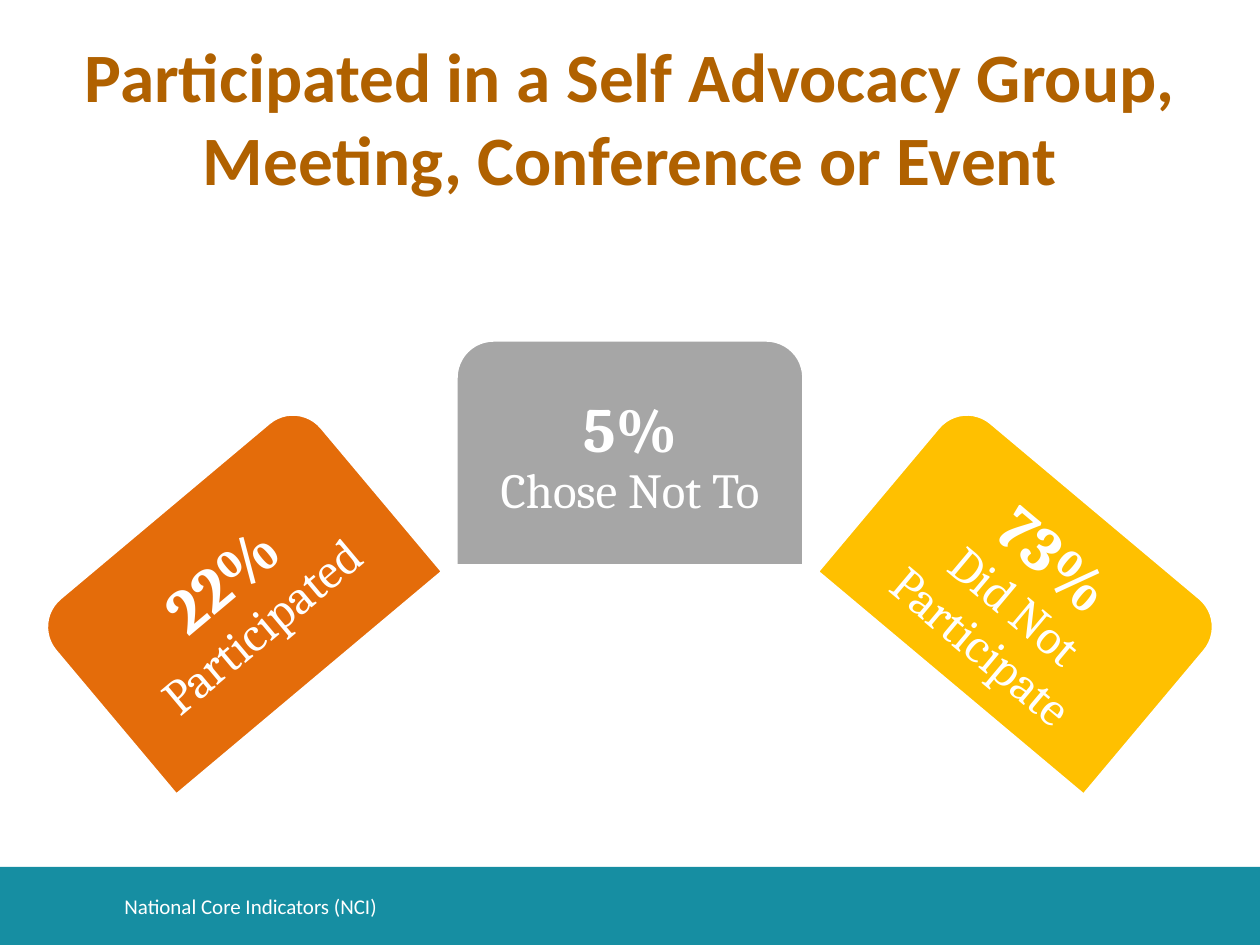
from math import cos, radians, sin

from pptx import Presentation
from pptx.dml.color import RGBColor
from pptx.enum.shapes import MSO_SHAPE
from pptx.enum.text import MSO_ANCHOR, PP_ALIGN
from pptx.util import Inches, Pt

TITLE = "Participated in a Self Advocacy Group, Meeting, Conference or Event"
FOOTER = "National Core Indicators (NCI)"
# share, answer, fill, rotation in degrees, centre in px
CARDS = [
    ("22%", "Participated", "E46C0A", -40, (237, 597)),
    ("5%", "Chose Not To", "A6A6A6", 0, (630, 453)),
    ("73%", "Did Not Participate", "FFC000", 40, (1023, 597)),
]
WHITE, BROWN, TEAL = "FFFFFF", "B06100", "168EA2"
SLIDE_W, SLIDE_H = 1260, 945
CARD_W, CARD_H = 348, 226
LABEL_W, LABEL_H = 325, 214
LABEL_DROP = 6  # label sits this far below the card centre, along the card's own axis
BAND_TOP = 867


def px(length):
    return Inches(length / 126)


def color(hex_code):
    return RGBColor.from_string(hex_code)


def centered(center, width, height):
    return center[0] - width / 2, center[1] - height / 2, width, height


def add_block(slide, preset, box, fill, line=None, rotation=0):
    block = slide.shapes.add_shape(preset, *map(px, box))
    block.shadow.inherit = False
    block.rotation = rotation
    block.fill.solid()
    block.fill.fore_color.rgb = color(fill)
    if line:
        block.line.color.rgb = color(line)
        block.line.width = Pt(2)
    else:
        block.line.fill.background()


def add_text(slide, box, lines, font="Calibri", ink=WHITE, align=PP_ALIGN.CENTER,
             spacing=None, side_inset=0.1, rotation=0):
    """Add one paragraph; lines holds (text, size, bold), parted by line breaks."""
    text_box = slide.shapes.add_textbox(*map(px, box))
    text_box.rotation = rotation
    frame = text_box.text_frame
    frame.word_wrap = True
    frame.vertical_anchor = MSO_ANCHOR.MIDDLE
    frame.margin_left = frame.margin_right = Inches(side_inset)
    paragraph = frame.paragraphs[0]
    paragraph.alignment = align
    paragraph.line_spacing = spacing
    for index, (text, size, bold) in enumerate(lines):
        if index:
            paragraph.add_line_break()
        run = paragraph.add_run()
        run.text = text
        run.font.name = font
        run.font.size = Pt(size)
        run.font.bold = bold
        run.font.color.rgb = color(ink)


def add_card(slide, share, answer, fill, rotation, center):
    add_block(slide, MSO_SHAPE.ROUND_2_SAME_RECTANGLE,
              centered(center, CARD_W, CARD_H), fill, WHITE, rotation)
    angle = radians(rotation)
    label_center = (center[0] - LABEL_DROP * sin(angle),
                    center[1] + LABEL_DROP * cos(angle))
    add_text(slide, centered(label_center, LABEL_W, LABEL_H),
             [(share, 36, True), (answer, 28, False)], font="Cambria",
             spacing=0.9, side_inset=0.15, rotation=rotation)


def main():
    deck = Presentation()
    deck.slide_width, deck.slide_height = px(SLIDE_W), px(SLIDE_H)
    slide = deck.slides.add_slide(deck.slide_layouts[6])
    add_block(slide, MSO_SHAPE.RECTANGLE,
              (0, BAND_TOP, SLIDE_W, SLIDE_H - BAND_TOP), TEAL)
    add_text(slide, (63, 38, 1134, 157), [(TITLE, 39.6, True)], ink=BROWN)
    for card in CARDS:
        add_card(slide, *card)
    add_text(slide, (112, 881, 932, 50), [(FOOTER, 12, False)], align=PP_ALIGN.LEFT)
    deck.save("out.pptx")


if __name__ == "__main__":
    main()
